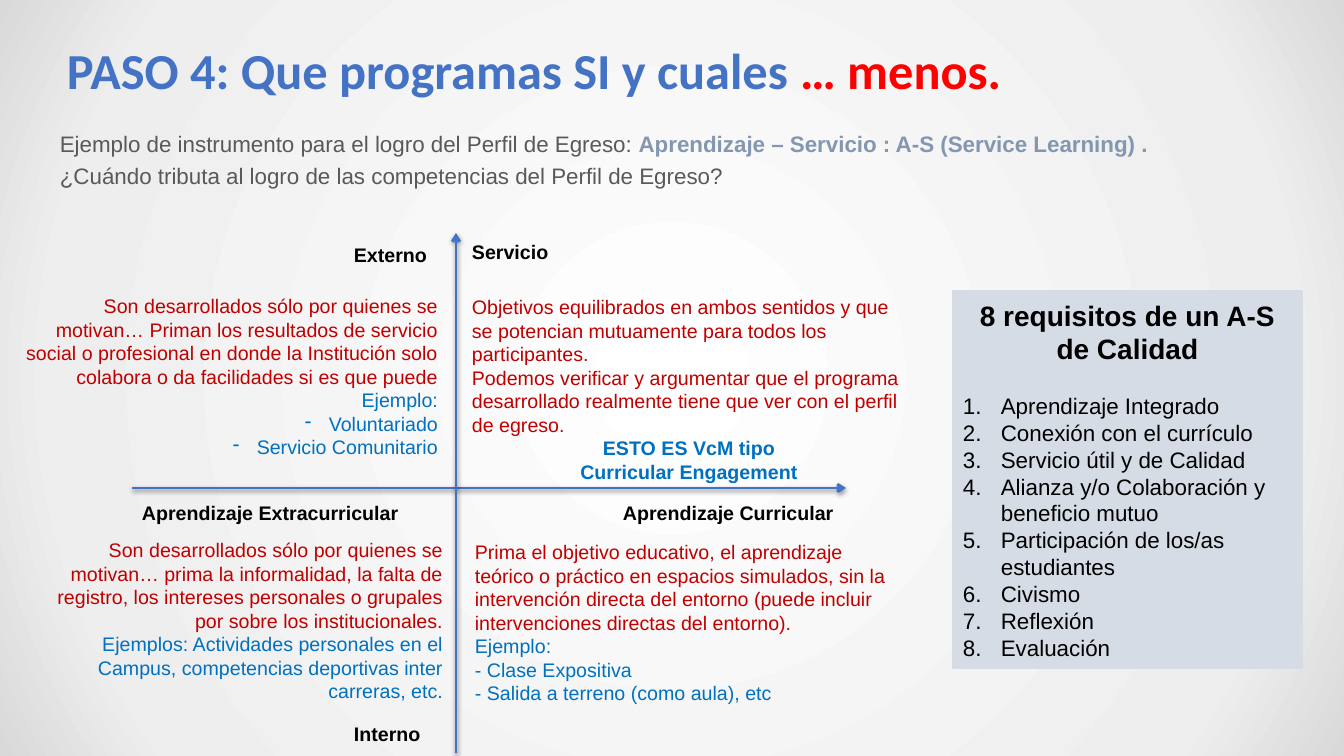
from lxml.etree import SubElement
from pptx import Presentation
from pptx.dml.color import RGBColor
from pptx.enum.shapes import MSO_CONNECTOR, MSO_SHAPE
from pptx.enum.text import MSO_ANCHOR, PP_ALIGN
from pptx.oxml import parse_xml
from pptx.oxml.ns import nsdecls, qn
from pptx.util import Emu, Pt

BLUE, RED, BLACK, GRAY = "4472C4", "C00000", "000000", "595959"
EXAMPLE, ACCENT, PANEL = "0070C0", "8497B0", "D6DCE5"
LEFT, CENTER, RIGHT, JUSTIFY = PP_ALIGN.LEFT, PP_ALIGN.CENTER, PP_ALIGN.RIGHT, PP_ALIGN.JUSTIFY

TITLE = [([("PASO 4: Que programas SI y cuales ", BLUE, True),
           ("… menos.", "FF0000", True)], LEFT, None)]
INTRO = [
    ([("Ejemplo de instrumento para el logro del Perfil de Egreso: ", GRAY, False),
      ("Aprendizaje – Servicio : A-S (Service Learning) .", ACCENT, True)], JUSTIFY, None),
    ([("¿Cuándo tributa al logro de las competencias del Perfil de Egreso?", GRAY, False)],
     JUSTIFY, None),
]
QUADRANTS = [
    ((16, 289, 432, 201), RIGHT, [
        ("Son desarrollados sólo por quienes se motivan… Priman los resultados de servicio "
         "social o profesional en donde la Institución solo colabora o da facilidades si es "
         "que puede", RED),
        ("Ejemplo:", EXAMPLE),
        ("Voluntariado", EXAMPLE, False, RIGHT, "-"),
        ("Servicio Comunitario", EXAMPLE, False, RIGHT, "-")]),
    ((462, 290, 454, 201), LEFT, [
        ("Objetivos equilibrados en ambos sentidos y que se potencian mutuamente para todos "
         "los participantes.", RED),
        ("Podemos verificar y argumentar que el programa desarrollado realmente tiene que ver "
         "con el perfil de egreso.", RED),
        ("ESTO ES VcM tipo", EXAMPLE, True, CENTER),
        ("Curricular Engagement", EXAMPLE, True, CENTER)]),
    ((16, 533, 437, 176), RIGHT, [
        ("Son desarrollados sólo por quienes se motivan… prima la informalidad, la falta de "
         "registro, los intereses personales o grupales por sobre los institucionales.", RED),
        ("Ejemplos: Actividades personales en el Campus, competencias deportivas inter "
         "carreras, etc.", EXAMPLE)]),
    ((465, 535, 451, 176), LEFT, [
        ("Prima el objetivo educativo, el aprendizaje teórico o práctico en espacios "
         "simulados, sin la intervención directa del entorno (puede incluir intervenciones "
         "directas del entorno).", RED),
        ("Ejemplo:", EXAMPLE),
        ("- Clase Expositiva", EXAMPLE),
        ("- Salida a terreno (como aula), etc", EXAMPLE)]),
]
LABELS = [
    ("Externo", 344, 238, 111),
    ("Servicio", 462, 235, 111),
    ("Aprendizaje Extracurricular", 132, 496, 318),
    ("Aprendizaje Curricular", 613, 496, 232),
    ("Interno", 344, 717, 111),
]
AXES = [(132, 488, 846, 488), (456, 753, 456, 233)]
REQUIREMENTS_TITLE = "8 requisitos de un A-S de Calidad"
REQUIREMENTS = [
    "Aprendizaje Integrado", "Conexión con el currículo", "Servicio útil y de Calidad",
    "Alianza y/o Colaboración y beneficio mutuo", "Participación de los/as estudiantes",
    "Civismo", "Reflexión", "Evaluación",
]
BACKGROUND_STOPS = [(0, "FFFFFF"), (81, "EEEEEE"), (100, "D9D9D9")]
HANGING = {"-": 24, "1.": 38}


def px(length):
    return Emu(round(length * 12192000 / 1344))


def color(value):
    return RGBColor.from_string(value)


def add_bullet(para, bullet):
    properties = para._p.get_or_add_pPr()
    indent = px(HANGING[bullet])
    properties.set("marL", str(indent))
    properties.set("indent", str(-indent))
    if bullet == "1.":
        SubElement(properties, qn("a:buFont"), typeface="+mj-lt")
        SubElement(properties, qn("a:buAutoNum"), type="arabicPeriod")
    else:
        SubElement(properties, qn("a:buChar"), char=bullet)


def write(frame, paragraphs, size, font="Arial"):
    frame.word_wrap = True
    for index, (spans, align, bullet) in enumerate(paragraphs):
        para = frame.add_paragraph() if index else frame.paragraphs[0]
        para.alignment = align
        if bullet:
            add_bullet(para, bullet)
        for text, fill, bold in spans:
            span = para.add_run()
            span.text = text
            span.font.name = font
            span.font.size = Pt(size)
            span.font.bold = bold
            span.font.color.rgb = color(fill)


def add_text(page, bounds, paragraphs, size, font="Arial"):
    box = page.shapes.add_textbox(*map(px, bounds))
    write(box.text_frame, paragraphs, size, font)
    return box.text_frame


def paint_background(page):
    stops = "".join(f'<a:gs pos="{place * 1000}"><a:srgbClr val="{value}"/></a:gs>'
                    for place, value in BACKGROUND_STOPS)
    page.background.fill.solid()
    solid = page.background._cSld.find(".//" + qn("a:solidFill"))
    solid.getparent().replace(solid, parse_xml(
        f'<a:gradFill {nsdecls("a")} rotWithShape="1"><a:gsLst>{stops}</a:gsLst>'
        '<a:path path="circle"><a:fillToRect l="50000" t="50000" r="50000" b="50000"/>'
        '</a:path></a:gradFill>'))


def add_axis(page, ends):
    axis = page.shapes.add_connector(MSO_CONNECTOR.STRAIGHT, *map(px, ends))
    axis.line.width = Pt(2)
    axis.line.color.rgb = color(BLUE)
    SubElement(axis.line._get_or_add_ln(), qn("a:tailEnd"), type="arrow")
    axis._element.spPr.append(parse_xml(
        f'<a:effectLst {nsdecls("a")}><a:outerShdw blurRad="40000" dist="20000" dir="5400000" '
        f'rotWithShape="0"><a:srgbClr val="{BLACK}"><a:alpha val="38000"/></a:srgbClr>'
        '</a:outerShdw></a:effectLst>'))


def add_requirements(page):
    panel = page.shapes.add_shape(MSO_SHAPE.RECTANGLE, *map(px, (953, 291, 349, 377)))
    panel.shadow.inherit = False
    panel.fill.solid()
    panel.fill.fore_color.rgb = color(PANEL)
    panel.line.color.rgb = color(PANEL)
    panel.line.width = Pt(2)
    frame = panel.text_frame
    items = [([(text, BLACK, False)], LEFT, "1.") for text in REQUIREMENTS]
    write(frame, [([(REQUIREMENTS_TITLE, BLACK, True)], CENTER, None)] + items, 16)
    heading = frame.paragraphs[0]
    heading.runs[0].font.size = Pt(20)
    heading.space_after = Pt(19)


def quadrant_paragraph(align, text, fill, bold=False, own_align=None, bullet=None):
    return [(text, fill, bold)], own_align or align, bullet


def main():
    deck = Presentation()
    deck.slide_width, deck.slide_height = px(1344), px(756)
    page = deck.slides.add_slide(deck.slide_layouts[6])
    paint_background(page)

    title = add_text(page, (67, 30, 1210, 79), TITLE, 36, "Calibri")
    title.margin_left = title.margin_right = 0
    title.vertical_anchor = MSO_ANCHOR.MIDDLE
    intro = add_text(page, (50, 125, 1227, 89), INTRO, 16)
    intro.paragraphs[1].space_before = Pt(4)

    for ends in AXES:
        add_axis(page, ends)
    for bounds, align, lines in QUADRANTS:
        add_text(page, bounds, [quadrant_paragraph(align, *line) for line in lines], 14)
    for text, left, top, width in LABELS:
        add_text(page, (left, top, width, 34), [([(text, BLACK, True)], LEFT, None)], 14)
    add_requirements(page)
    deck.save("out.pptx")


if __name__ == "__main__":
    main()
